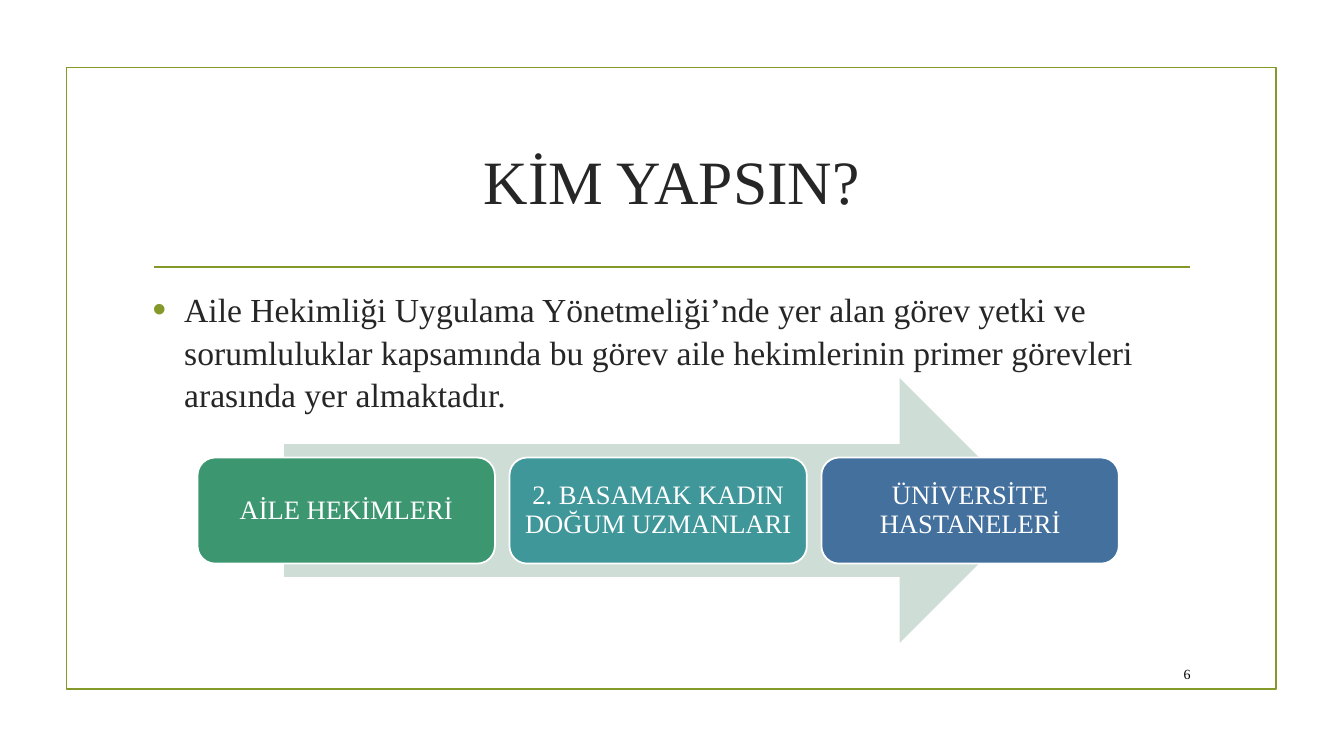
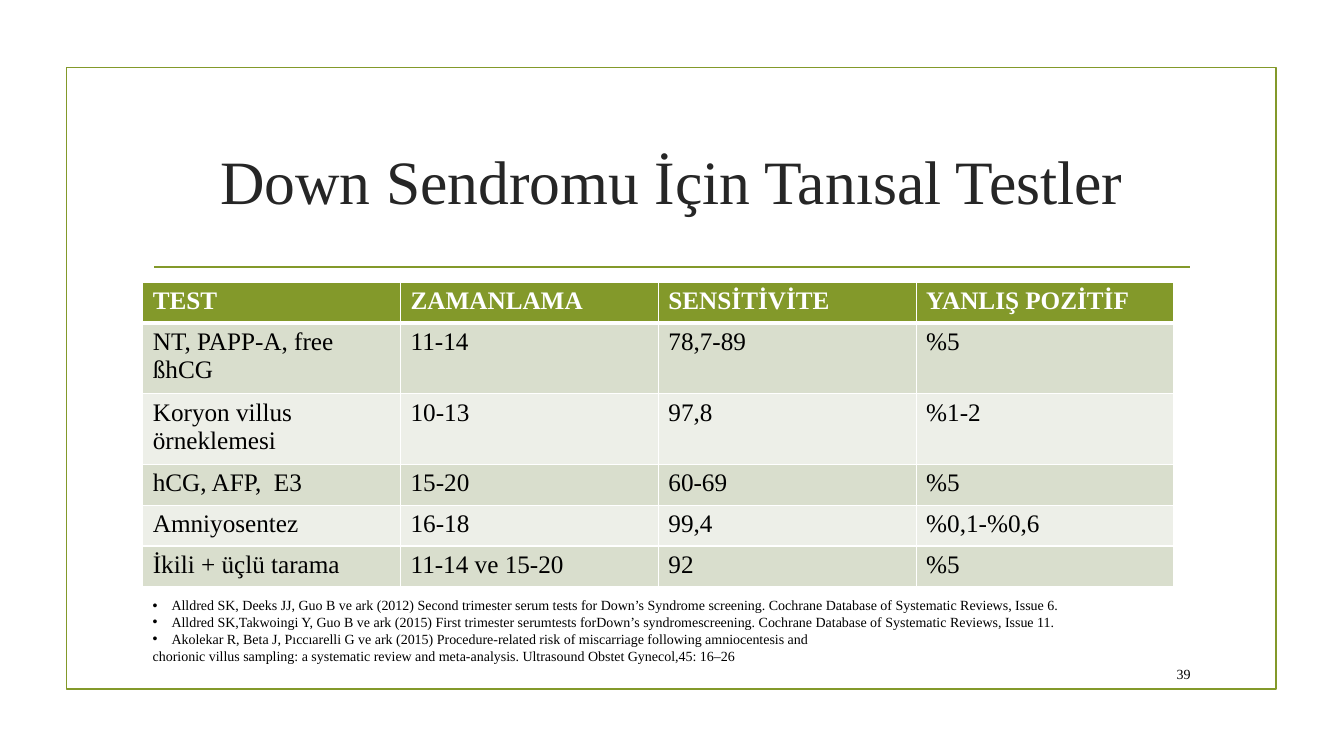
import pptx
import pptx.util
import pptx.dml.color
import pptx.enum.shapes
import pptx.enum.text
import pptx.oxml
import pptx.oxml.ns
from dataclasses import dataclass

Pt = pptx.util.Pt
Shape = pptx.enum.shapes.MSO_SHAPE
Align = pptx.enum.text.PP_ALIGN
Anchor = pptx.enum.text.MSO_ANCHOR


@dataclass(frozen=True)
class Theme:
    font: str = "Times New Roman"
    green: str = "83992A"
    ink: str = "262626"
    black: str = "000000"
    white: str = "FFFFFF"
    arrow: str = "CEDDD5"
    steps: tuple = ("3C9770", "40979A", "44709D")
    bands: tuple = ("D9DECD", "EDEFE8")
    title: int = 44
    body: int = 24
    step: int = 19
    cell: int = 18
    small: int = 10
    line: float = 1.25


T = Theme()

# Boxes: left, top, width, height
FRAME = (47.5, 48.2, 864, 444.2)
TITLE = (102, 77, 756, 103)
RULE = (110.2, 190.8, 740, 0)
BODY = (102, 201.6, 756, 261.4)
FLOW = (141.1, 270, 658.1, 189.4)
TABLE = (102, 201.6, 736.6, 175.2)
REFS = (102, 427, 756, 46.8)
NUMBER = (815, 470.2, 42.5, 22.3)

STEPS = ["AİLE HEKİMLERİ", "2. BASAMAK KADIN DOĞUM UZMANLARI",
         "ÜNİVERSİTE HASTANELERİ"]
ROWS = [
    ["TEST", "ZAMANLAMA", "SENSİTİVİTE", "YANLIŞ POZİTİF"],
    ["NT, PAPP‐A, free ßhCG", "11-14", "78,7-89", "%5"],
    ["Koryon villus örneklemesi", "10-13", "97,8", "%1-2"],
    ["hCG, AFP,  E3", "15-20", "60-69", "%5"],
    ["Amniyosentez", "16-18", "99,4", "%0,1-%0,6"],
    ["İkili + üçlü tarama", "11-14 ve 15-20", "92", "%5"],
]
SOURCES = [
    ("Alldred SK, Deeks JJ, Guo B ve ark (2012) Second trimester serum tests for "
     "Down’s Syndrome screening. Cochrane Database of Systematic Reviews, Issue 6.", 13.5),
    ("Alldred SK,Takwoingi Y, Guo B ve ark (2015) First trimester serumtests "
     "forDown’s syndromescreening. Cochrane Database of Systematic Reviews, Issue 11.", 13.5),
    ("Akolekar R, Beta J, Pıccıarelli G ve ark (2015) Procedure-related risk of "
     "miscarriage following amniocentesis and", 13.5),
    ("chorionic villus sampling: a systematic review and meta-analysis. "
     "Ultrasound Obstet Gynecol,45: 16–26", 0),
]


def color(code):
    return pptx.dml.color.RGBColor.from_string(code)


def place(box):
    return [Pt(n) for n in box]


def node(xml):
    return pptx.oxml.parse_xml(xml.replace(">", " " + pptx.oxml.ns.nsdecls("a") + ">", 1))


def write(frame, text, size, ink=T.black, bold=False, align=Align.LEFT,
          space=None, hang=0, dot=None):
    """Add one paragraph to a frame; hang gives it a bullet with that indent."""
    para = frame.paragraphs[0] if not frame.text else frame.add_paragraph()
    para.alignment = align
    if space:
        para.line_spacing = space
    if hang:
        props = para._p.get_or_add_pPr()
        props.set("marL", str(Pt(hang)))
        props.set("indent", str(-Pt(hang)))
        if dot:
            props.append(node(f'<a:buClr><a:srgbClr val="{dot}"/></a:buClr>'))
            props.append(node('<a:buSzPct val="115000"></a:buSzPct>'))
        props.append(node('<a:buFont typeface="Arial"></a:buFont>'))
        props.append(node('<a:buChar char="•"></a:buChar>'))
    run = para.add_run()
    run.text = text
    font = run.font
    font.name, font.size, font.bold = T.font, Pt(size), bold
    font.color.rgb = color(ink)


def area(slide, box, anchor=Anchor.MIDDLE):
    frame = slide.shapes.add_textbox(*place(box)).text_frame
    frame.word_wrap = True
    frame.vertical_anchor = anchor
    return frame


def block(slide, kind, box, fill=None, line=None):
    shape = slide.shapes.add_shape(kind, *place(box))
    shape.shadow.inherit = False
    for part, code in ((shape.fill, fill), (shape.line.fill, line)):
        if code:
            part.solid()
            part.fore_color.rgb = color(code)
        else:
            part.background()
    if line:
        shape.line.width = Pt(T.line)
    return shape


def base(deck, title, number):
    """Start a slide with the shared frame, rule, title and page number."""
    slide = deck.slides.add_slide(deck.slide_layouts[6])
    block(slide, Shape.RECTANGLE, FRAME, line=T.green)
    x, y, w, h = RULE
    rule = slide.shapes.add_connector(
        pptx.enum.shapes.MSO_CONNECTOR.STRAIGHT, *place((x, y, x + w, y + h)))
    rule.line.color.rgb = color(T.green)
    rule.line.width = Pt(T.line)
    rule._element.spPr.append(node("<a:effectLst></a:effectLst>"))
    write(area(slide, TITLE), title, T.title, T.ink, align=Align.CENTER)
    write(area(slide, NUMBER), str(number), T.small, align=Align.RIGHT)
    return slide


def flow(slide, box, steps):
    """Draw equal steps in a row over a wide arrow."""
    x, y, w, h = box
    gap, tall = 10.4, h * 0.4
    wide = (w - gap * (len(steps) - 1)) / len(steps)
    side = 61.9
    block(slide, Shape.RIGHT_ARROW, (x + side, y, w - 2 * side, h), T.arrow)
    for i, (text, fill) in enumerate(zip(steps, T.steps)):
        spot = (x + i * (wide + gap), y + (h - tall) / 2, wide, tall)
        frame = block(slide, Shape.ROUNDED_RECTANGLE, spot, fill, T.white).text_frame
        frame.word_wrap = True
        frame.vertical_anchor = Anchor.MIDDLE
        frame.margin_left = frame.margin_right = Pt(5.7)
        frame.margin_top = frame.margin_bottom = Pt(5.7)
        write(frame, text, T.step, T.white, align=Align.CENTER, space=0.9)


def edge(cell, widths):
    """Give a cell white borders; widths follow left, right, top, bottom."""
    props = cell._tc.get_or_add_tcPr()
    for side, width in zip("LRTB", widths):
        props.append(node(
            f'<a:ln{side} w="{Pt(width)}"><a:solidFill><a:srgbClr val="{T.white}"/>'
            f'</a:solidFill></a:ln{side}>'))


def grid(slide, box, rows):
    """Draw a table with a green head and banded rows."""
    table = slide.shapes.add_table(len(rows), len(rows[0]), *place(box)).table
    for col in table.columns:
        col.width = Pt(box[2] / len(rows[0]))
    for r, row in enumerate(rows):
        table.rows[r].height = Pt(box[3] / len(rows))
        head = r == 0
        for c, text in enumerate(row):
            cell = table.cell(r, c)
            edge(cell, (1, 1, 3 if r == 1 else 1, 3 if head else 1))
            cell.fill.solid()
            cell.fill.fore_color.rgb = color(T.green if head else T.bands[(r - 1) % 2])
            write(cell.text_frame, text, T.cell, T.white if head else T.black, bold=head)


def roles(deck):
    slide = base(deck, "KİM YAPSIN?", 6)
    write(area(slide, BODY, Anchor.TOP),
          "Aile Hekimliği Uygulama Yönetmeliği’nde yer alan görev yetki ve "
          "sorumluluklar kapsamında bu görev aile hekimlerinin primer görevleri "
          "arasında yer almaktadır.",
          T.body, T.ink, space=1.05, hang=22.5, dot=T.green)
    flow(slide, FLOW, STEPS)


def tests(deck):
    slide = base(deck, "Down Sendromu İçin Tanısal Testler", 39)
    grid(slide, TABLE, ROWS)
    frame = area(slide, REFS)
    for text, hang in SOURCES:
        write(frame, text, T.small, hang=hang)


def main():
    deck = pptx.Presentation()
    deck.slide_width, deck.slide_height = Pt(960), Pt(540)
    roles(deck)
    tests(deck)
    deck.save("out.pptx")


if __name__ == "__main__":
    main()
